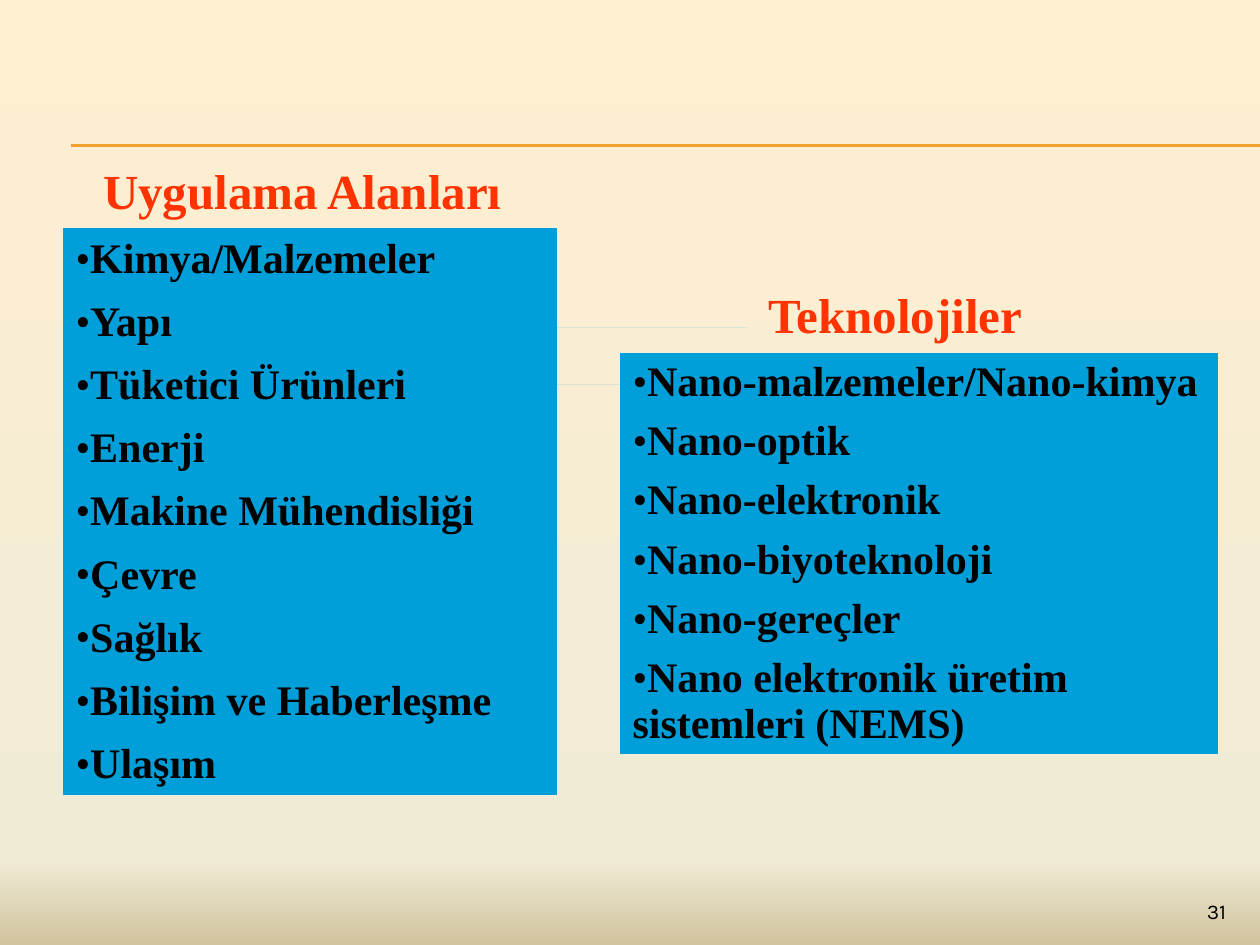
from copy import deepcopy
from dataclasses import dataclass

from pptx import Presentation
from pptx.dml.color import RGBColor
from pptx.enum.shapes import MSO_CONNECTOR, MSO_SHAPE
from pptx.enum.text import MSO_ANCHOR, PP_ALIGN
from pptx.oxml.ns import qn
from pptx.slide import Slide
from pptx.util import Inches, Pt
from lxml.etree import SubElement

BLACK = RGBColor(0x00, 0x00, 0x00)
BLUE = RGBColor(0x00, 0x9F, 0xDA)
RED = RGBColor(0xFF, 0x33, 0x00)
ORANGE = RGBColor(0xF0, 0xA2, 0x2E)
BACKGROUND_STOPS = (
    (0, RGBColor(0xFF, 0xEF, 0xD1)),
    (0.91, RGBColor(0xF0, 0xEB, 0xD5)),
    (1, RGBColor(0xD1, 0xC3, 0x9F)),
)
SERIF = "Times New Roman"
NO_TABLE_STYLE = "{2D5ABB26-0587-4C30-8999-92F81FD0307C}"


@dataclass
class Label:
    text: str
    left: float
    top: float
    width: float
    height: float
    font: str = SERIF
    size: int = 28
    color: RGBColor = RED
    bold: bool = True
    wrap: bool = False
    anchor: MSO_ANCHOR = MSO_ANCHOR.MIDDLE
    align: PP_ALIGN = PP_ALIGN.LEFT


@dataclass
class Panel:
    heading: Label
    items: list[str]
    left: float
    top: float
    width: float
    row_heights: list[float]
    strip_top: float


PANELS = [
    Panel(
        Label("Teknolojiler", 6, 2.21, 2.25, 0.57),
        ["Nano-malzemeler/Nano-kimya", "Nano-optik", "Nano-elektronik",
         "Nano-biyoteknoloji", "Nano-gereçler",
         "Nano elektronik üretim sistemleri (NEMS)"],
        4.92, 2.8, 4.75, [0.47] * 5 + [0.83], 3.05,
    ),
    Panel(
        Label("Uygulama Alanları", 0.72, 1.22, 3.39, 0.57),
        ["Kimya/Malzemeler", "Yapı", "Tüketici Ürünleri", "Enerji",
         "Makine Mühendisliği", "Çevre", "Sağlık",
         "Bilişim ve Haberleşme", "Ulaşım"],
        0.5, 1.81, 3.92, [0.5] * 9, 2.6,
    ),
]
PAGE_NUMBER = Label("31", 9, 7.08, 0.83, 0.27, "Karla", 12, BLACK, False, True,
                    MSO_ANCHOR.TOP, PP_ALIGN.RIGHT)


def paint_background(s: Slide) -> None:
    fill = s.background.fill
    fill.gradient()
    fill.gradient_angle = 270
    stop_list = s.background._cSld.find(".//" + qn("a:gsLst"))
    stop_list.append(deepcopy(stop_list[-1]))
    for stop, (position, color) in zip(fill.gradient_stops, BACKGROUND_STOPS):
        stop.position = position
        stop.color.rgb = color


def add_rule(s: Slide, top: float) -> None:
    line = s.shapes.add_connector(MSO_CONNECTOR.STRAIGHT, Inches(0.56), Inches(top),
                                  Inches(10), Inches(top))
    line.line.color.rgb = ORANGE
    line.line.width = Pt(0.75)
    SubElement(line._element.spPr, qn("a:effectLst"))


def add_strip(s: Slide, top: float) -> None:
    sp = s.shapes.add_shape(MSO_SHAPE.RECTANGLE, Inches(4.07), Inches(top),
                            Inches(1.86), Inches(0))
    sp.shadow.inherit = False
    sp.fill.solid()
    sp.fill.fore_color.rgb = BLUE
    sp.line.fill.background()


def add_run(p, text: str, font: str, size: int, color: RGBColor, bold: bool) -> None:
    r = p.add_run()
    r.text = text
    r.font.name = font
    r.font.size = Pt(size)
    r.font.bold = bold
    r.font.color.rgb = color


def add_bullet(p) -> None:
    properties = p._p.get_or_add_pPr()
    SubElement(properties, qn("a:buFont"), typeface=SERIF)
    SubElement(properties, qn("a:buChar"), char="•")


def add_label(s: Slide, label: Label) -> None:
    sp = s.shapes.add_textbox(Inches(label.left), Inches(label.top),
                              Inches(label.width), Inches(label.height))
    tf = sp.text_frame
    tf.word_wrap = label.wrap
    tf.vertical_anchor = label.anchor
    p = tf.paragraphs[0]
    p.alignment = label.align
    add_run(p, label.text, label.font, label.size, label.color, label.bold)


def add_panel(s: Slide, panel: Panel) -> None:
    add_strip(s, panel.strip_top)
    frame = s.shapes.add_table(len(panel.items), 1, Inches(panel.left), Inches(panel.top),
                               Inches(panel.width), Inches(sum(panel.row_heights)))
    table = frame.table
    table.first_row = False
    table.horz_banding = False
    table._tbl.tblPr.find(qn("a:tableStyleId")).text = NO_TABLE_STYLE
    for row, height, item in zip(table.rows, panel.row_heights, panel.items):
        row.height = Inches(height)
        cell = row.cells[0]
        cell.fill.solid()
        cell.fill.fore_color.rgb = BLUE
        cell.vertical_anchor = MSO_ANCHOR.MIDDLE
        p = cell.text_frame.paragraphs[0]
        add_bullet(p)
        add_run(p, item, SERIF, 24, BLACK, True)
    add_label(s, panel.heading)


def main() -> None:
    prs = Presentation()
    prs.slide_width = Inches(10)
    prs.slide_height = Inches(7.5)
    s = prs.slides.add_slide(prs.slide_layouts[6])
    paint_background(s)
    for top in (1.15, 1.16):
        add_rule(s, top)
    for panel in PANELS:
        add_panel(s, panel)
    add_label(s, PAGE_NUMBER)
    prs.save("out.pptx")


if __name__ == "__main__":
    main()
